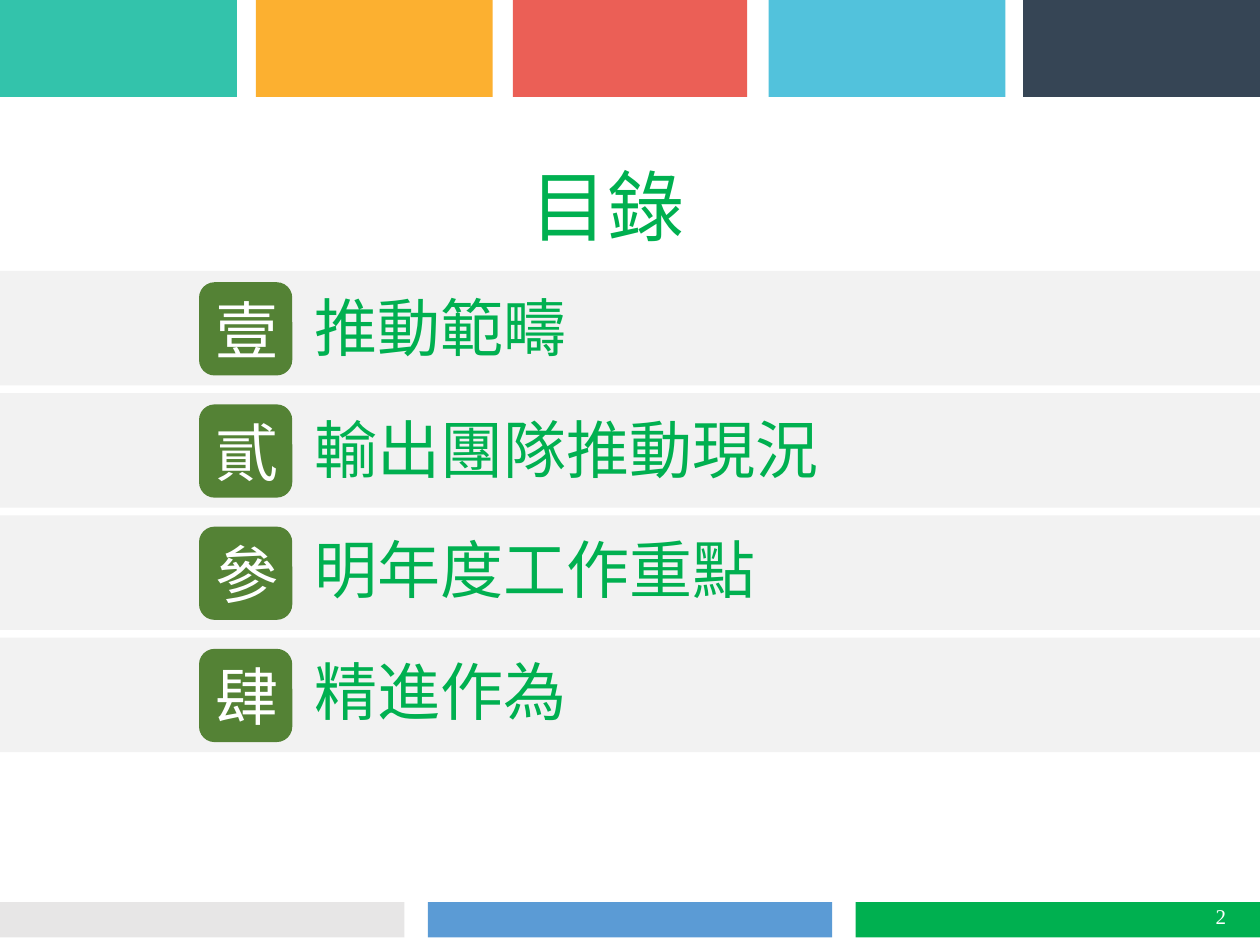
"""Build the table-of-contents slide with coloured header and footer bars."""
from lxml import etree
from pptx import Presentation
from pptx.dml.color import RGBColor
from pptx.enum.shapes import MSO_SHAPE
from pptx.enum.text import MSO_ANCHOR, PP_ALIGN
from pptx.oxml.ns import qn
from pptx.util import Inches, Pt

RECT, ROUND = MSO_SHAPE.RECTANGLE, MSO_SHAPE.ROUNDED_RECTANGLE
TOP, MIDDLE = MSO_ANCHOR.TOP, MSO_ANCHOR.MIDDLE
LEFT, CENTER, RIGHT = PP_ALIGN.LEFT, PP_ALIGN.CENTER, PP_ALIGN.RIGHT

COLORS = {
    "teal": "33C3AB", "amber": "FCB030", "coral": "EB5F56", "sky": "52C2DC",
    "navy": "364555", "silver": "E7E6E6", "blue": "5B9BD5", "green": "00B050",
    "band": "F2F2F2", "badge": "548235", "white": "FFFFFF",
}
CJK, SERIF = "Noto Sans CJK SC", "Times New Roman"

TITLE = "目錄"
PAGE = "2"
HEADER = [("teal", 0, 1.88), ("amber", 2.03, 1.88), ("coral", 4.07, 1.86),
          ("sky", 6.1, 1.88), ("navy", 8.12, 1.88)]
FOOTER = ["silver", "blue", "green"]
# number, heading, text offset from the badge, width, height, line spacing
ITEMS = [
    ("壹", "推動範疇", 0, 2.58, 0.71, None),
    ("貳", "輸出團隊推動現況", 0, 4.28, 0.71, None),
    ("參", "明年度工作重點", 0.05, 4.02, 0.65, 0.9),
    ("肆", "精進作為", 0.05, 4.02, 0.65, 0.9),
]
BAND_TOP, BADGE_TOP, PITCH = 2.15, 2.24, 0.97
FOOTER_WIDTH, FOOTER_PITCH = 3.21, 3.395


def add_block(slide, color, x, y, w, h, kind=RECT):
    s = slide.shapes.add_shape(kind, Inches(x), Inches(y), Inches(w), Inches(h))
    s.shadow.inherit = False
    s.fill.solid()
    s.fill.fore_color.rgb = RGBColor.from_string(COLORS[color])
    s.line.fill.background()
    return s


def add_box(slide, x, y, w, h):
    return slide.shapes.add_textbox(Inches(x), Inches(y), Inches(w), Inches(h))


def write(s, text, size=36, color="green", font=CJK, align=LEFT, anchor=TOP, spacing=None):
    tf = s.text_frame
    tf.word_wrap = True
    tf.vertical_anchor = anchor
    p = tf.paragraphs[0]
    p.alignment = align
    p.line_spacing = spacing
    r = p.add_run()
    r.text = text
    r.font.size = Pt(size)
    r.font.name = font
    r.font.color.rgb = RGBColor.from_string(COLORS[color])
    etree.SubElement(r.font._element, qn("a:ea"), typeface=font)


def main():
    prs = Presentation()
    prs.slide_width, prs.slide_height = Inches(10), Inches(7.5)
    slide = prs.slides.add_slide(prs.slide_layouts[6])

    for i, color in enumerate(FOOTER):
        add_block(slide, color, i * FOOTER_PITCH, 7.16, FOOTER_WIDTH, 0.28)
    for color, x, w in HEADER:
        add_block(slide, color, x, 0, w, 0.77)

    for i, (number, heading, offset, w, h, spacing) in enumerate(ITEMS):
        add_block(slide, "band", 0, BAND_TOP + i * PITCH, 10, 0.91)
        y = BADGE_TOP + i * PITCH
        badge = add_block(slide, "badge", 1.58, y, 0.74, 0.74, ROUND)
        write(badge, number, color="white", align=CENTER, anchor=MIDDLE)
        write(add_box(slide, 2.4, y + offset, w, h), heading, spacing=spacing)

    write(add_box(slide, 2.96, 1.14, 3.72, 0.97), TITLE, size=44, align=CENTER, anchor=MIDDLE)
    write(add_box(slide, 7.58, 7.07, 2.25, 0.4), PAGE, size=12, color="white",
          font=SERIF, align=RIGHT, anchor=MIDDLE)

    prs.save("out.pptx")


if __name__ == "__main__":
    main()
